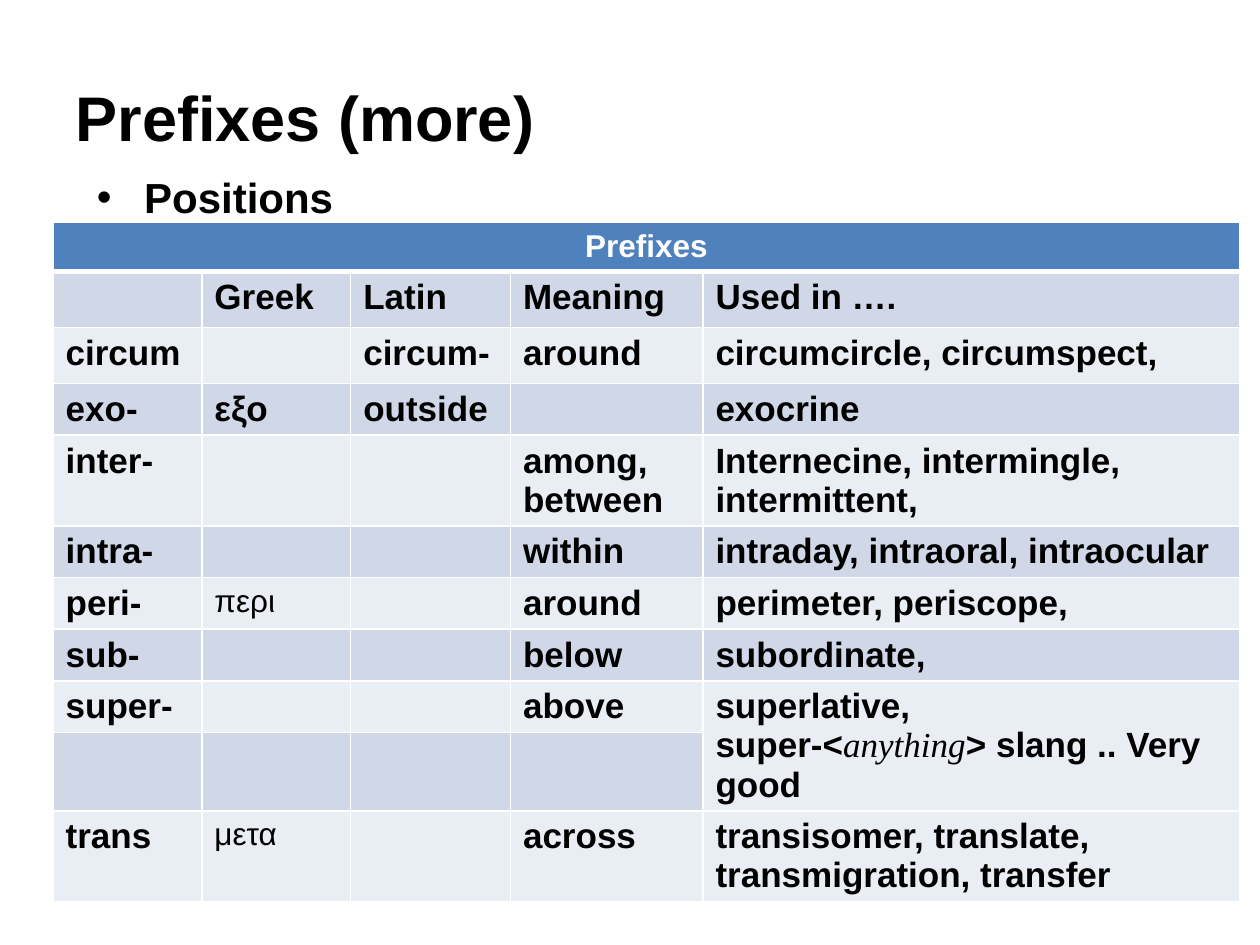
from dataclasses import dataclass

from lxml.etree import SubElement
from pptx import Presentation
from pptx.dml.color import RGBColor
from pptx.enum.text import MSO_ANCHOR, PP_ALIGN
from pptx.oxml.ns import qn
from pptx.util import Cm, Pt


@dataclass(frozen=True)
class Theme:
    font: str = "Arial"
    aside_font: str = "Times New Roman"
    ink: str = "000000"
    paper: str = "FFFFFF"
    header: str = "4F81BD"
    bands: tuple = ("D0D8E8", "E9EDF4")
    title_size: int = 36
    list_size: int = 24
    cell_size: int = 20
    small_size: int = 18


COLUMN_WIDTHS = [3, 3, 3.22, 3.88, 10.82]
ROW_HEIGHTS = [0.99, 1.13, 1.13, 1.03, 1.83, 1.04, 1.04, 1.04, 1.04, 1.57, 1.81]
PLAIN_WORDS = {"περι", "μετα"}
# Asterisks enclose an italic aside.
ROWS = [
    ["Prefixes", "", "", "", ""],
    ["", "Greek", "Latin", "Meaning", "Used in …."],
    ["circum", "", "circum-", "around", "circumcircle, circumspect,"],
    ["exo-", "εξο", "outside", "", "exocrine"],
    ["inter-", "", "", "among, between", "Internecine, intermingle, intermittent,"],
    ["intra-", "", "", "within", "intraday, intraoral, intraocular"],
    ["peri-", "περι", "", "around", "perimeter, periscope,"],
    ["sub-", "", "", "below", "subordinate,"],
    ["super-", "", "", "above", "superlative,\nsuper-<*anything*> slang .. Very good"],
    ["", "", "", "", ""],
    ["trans", "μετα", "", "across", "transisomer, translate, transmigration, transfer"],
]
MERGES = [((0, 0), (0, 4)), ((8, 4), (9, 4))]


class SlideBuilder:
    def __init__(self, deck, theme):
        self.theme = theme
        self.page = deck.slides.add_slide(deck.slide_layouts[1])

    def style(self, paragraph, size, color, bold=True):
        font = paragraph.font
        font.name, font.size, font.bold = self.theme.font, Pt(size), bold
        font.color.rgb = RGBColor.from_string(color)

    def place(self, box, left, top, width, height):
        box.left, box.top, box.width, box.height = map(Cm, (left, top, width, height))

    def title(self, text, *bounds):
        box = self.page.shapes.title
        self.place(box, *bounds)
        box.text_frame.text = text
        box.text_frame.vertical_anchor = MSO_ANCHOR.MIDDLE
        para = box.text_frame.paragraphs[0]
        para.alignment = PP_ALIGN.LEFT
        self.style(para, self.theme.title_size, self.theme.ink)

    def bullets(self, items, *bounds):
        box = self.page.placeholders[1]
        self.place(box, *bounds)
        box.text_frame.text = "\n".join(items)
        for para in box.text_frame.paragraphs:
            self.style(para, self.theme.list_size, self.theme.ink)

    def table(self, rows, widths, heights, merges, left, top):
        frame = self.page.shapes.add_table(
            len(rows), len(widths), Cm(left), Cm(top), Cm(sum(widths)), Cm(sum(heights)))
        table = frame.table
        for column, width in zip(table.columns, widths):
            column.width = Cm(width)
        for row, height in zip(table.rows, heights):
            row.height = Cm(height)
        for start, end in merges:
            table.cell(*start).merge(table.cell(*end))
        for r, texts in enumerate(rows):
            for c, text in enumerate(texts):
                self.cell(table.cell(r, c), text, r)

    def cell(self, cell, text, row):
        theme = self.theme
        is_header = row == 0
        self.borders(cell, top=3 if row == 1 else 1, bottom=3 if is_header else 1)
        cell.fill.solid()
        fill = theme.header if is_header else theme.bands[(row - 1) % 2]
        cell.fill.fore_color.rgb = RGBColor.from_string(fill)
        plain = text in PLAIN_WORDS
        small = plain or is_header or not text
        for index, line in enumerate(text.split("\n")):
            frame = cell.text_frame
            para = frame.add_paragraph() if index else frame.paragraphs[0]
            self.style(para, theme.small_size if small else theme.cell_size,
                       theme.paper if is_header else theme.ink, not plain)
            if is_header:
                para.alignment = PP_ALIGN.CENTER
            for part, words in enumerate(line.split("*")):
                if not words:
                    continue
                span = para.add_run()
                span.text = words
                if part % 2:
                    span.font.name = theme.aside_font
                    span.font.bold, span.font.italic = False, True

    def borders(self, cell, top, bottom):
        properties = cell._tc.get_or_add_tcPr()
        for side, points in (("L", 1), ("R", 1), ("T", top), ("B", bottom)):
            line = SubElement(properties, qn(f"a:ln{side}"), w=str(Pt(points)))
            fill = SubElement(line, qn("a:solidFill"))
            SubElement(fill, qn("a:srgbClr"), val=self.theme.paper)


def main():
    deck = Presentation()
    deck.slide_width, deck.slide_height = Cm(25.4), Cm(19.05)
    slide = SlideBuilder(deck, Theme())
    slide.title("Prefixes (more)", 1.27, 0.76, 22.86, 3.18)
    slide.bullets(["Positions"], 1.7, 3.33, 21.59, 13.36)
    slide.table(ROWS, COLUMN_WIDTHS, ROW_HEIGHTS, MERGES, left=1.07, top=4.48)
    deck.save("out.pptx")


if __name__ == "__main__":
    main()
